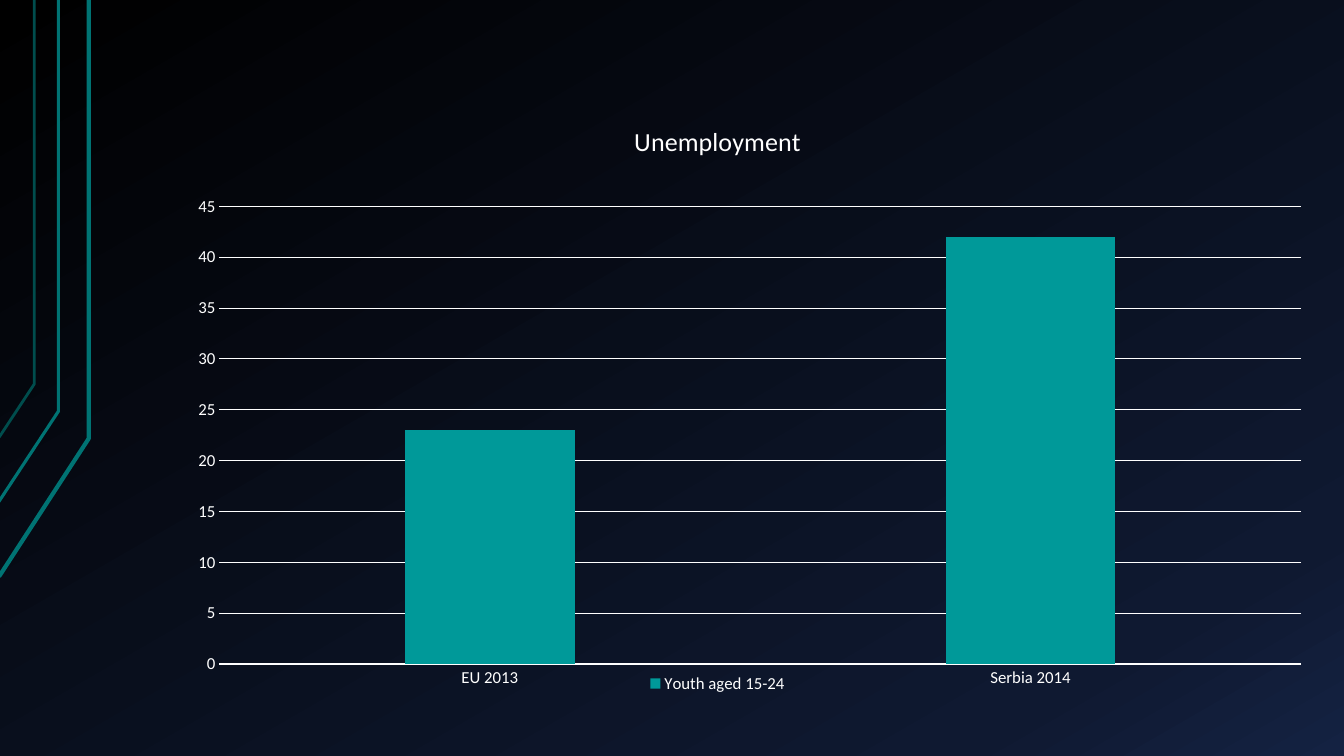
from copy import deepcopy

from lxml import etree
from pptx import Presentation
from pptx import util as u
from pptx.chart import data
from pptx.dml.color import RGBColor
from pptx.enum import chart as ch
from pptx.oxml import ns

WIDTH, HEIGHT = 13.33, 7.5
FONT = "Calibri"
COLOURS = {
    "night": "000000",
    "navy": "0F1931",
    "dusk": "142242",
    "trace": "007373",
    "faint_trace": "004D4D",
    "bar": "009999",
    "text": "FFFFFF",
}
BACKDROP_STOPS = [(0, "night"), (85, "navy"), (100, "dusk")]
BACKDROP_ANGLE = 60

# Each trace: start x, start y, bend x, bend y (hundredths of an inch),
# width (pt), colour
TRACES = [
    (-1, 572, 88, 435, 3, "trace"),
    (-2, 499, 58, 408, 2.25, "trace"),
    (-1, 434, 34, 381, 2, "faint_trace"),
]


def rgb(name):
    return RGBColor.from_string(COLOURS[name])


def style_font(font, size):
    font.name, font.size, font.bold = FONT, u.Pt(size), False
    font.color.rgb = rgb("text")


def style_line(line, colour, width):
    line.color.rgb = rgb(colour)
    line.width = u.Pt(width)


def paint_backdrop(slide):
    fill = slide.background.fill
    fill.gradient()
    gradient = slide.background._cSld.find(".//" + ns.qn("a:gradFill"))
    stops = gradient.find(ns.qn("a:gsLst"))
    stops.append(deepcopy(stops[-1]))
    for stop, (position, colour) in zip(fill.gradient_stops, BACKDROP_STOPS):
        stop.color.rgb = rgb(colour)
        stop.position = position / 100
    # Clockwise angle, in 60000ths of a degree
    direction = gradient.find(ns.qn("a:lin"))
    direction.set("ang", str(BACKDROP_ANGLE * 60000))
    direction.set("scaled", "0")


def add_trace(slide, x, y, bend_x, bend_y, width, colour):
    builder = slide.shapes.build_freeform(x, y, scale=u.Inches(0.01))
    builder.add_line_segments([(bend_x, bend_y), (bend_x, 0)], close=False)
    trace = builder.convert_to_shape()
    trace.shadow.inherit = False
    trace.fill.background()
    style_line(trace.line, colour, width)


def place_plot(chart, **shares):
    """Fix the inner plot area, in shares of the chart's size."""
    plot_area = chart._chartSpace.find(".//" + ns.qn("c:plotArea"))
    for old in plot_area.findall(ns.qn("c:layout")):
        plot_area.remove(old)
    layout = etree.Element(ns.qn("c:layout"))
    manual = etree.SubElement(layout, ns.qn("c:manualLayout"))
    settings = {"layoutTarget": "inner", "xMode": "edge", "yMode": "edge"}
    for tag, value in {**settings, **shares}.items():
        etree.SubElement(manual, ns.qn("c:" + tag)).set("val", str(value))
    plot_area.insert(0, layout)


def style_axis(axis):
    axis.major_tick_mark = axis.minor_tick_mark = ch.XL_TICK_MARK.NONE
    style_font(axis.tick_labels.font, 12)


def add_unemployment_chart(slide):
    rates = data.CategoryChartData()
    rates.categories = ["EU 2013", "Serbia 2014"]
    rates.add_series("Youth aged 15-24", [23, 42])
    chart = slide.shapes.add_chart(
        ch.XL_CHART_TYPE.COLUMN_CLUSTERED,
        u.Inches(1.33), u.Inches(1), u.Inches(11.58), u.Inches(5.92), rates,
    ).chart
    style_font(chart.font, 10)

    # Title
    heading = chart.chart_title.text_frame
    heading.text = "Unemployment"
    style_font(heading.paragraphs[0].font, 18.6)
    chart.chart_title.include_in_layout = False

    # Columns
    columns = chart.plots[0]
    columns.vary_by_categories = False
    columns.gap_width, columns.overlap = 219, -27
    columns.series[0].format.fill.solid()
    columns.series[0].format.fill.fore_color.rgb = rgb("bar")
    place_plot(chart, x=0.073, y=0.177, w=0.927, h=0.767)

    # Axes
    style_axis(chart.category_axis)
    style_line(chart.category_axis.format.line, "text", 0.75)
    rate_axis = chart.value_axis
    style_axis(rate_axis)
    rate_axis.minimum_scale, rate_axis.maximum_scale = 0, 45
    rate_axis.major_unit = 5
    rate_axis.format.line.fill.background()
    style_line(rate_axis.major_gridlines.format.line, "text", 0.75)

    # Legend
    chart.has_legend = True
    chart.legend.position = ch.XL_LEGEND_POSITION.BOTTOM
    chart.legend.include_in_layout = False
    style_font(chart.legend.font, 12)


def main():
    deck = Presentation()
    deck.slide_width, deck.slide_height = u.Inches(WIDTH), u.Inches(HEIGHT)
    slide = deck.slides.add_slide(deck.slide_layouts[6])
    paint_backdrop(slide)
    for trace in TRACES:
        add_trace(slide, *trace)
    add_unemployment_chart(slide)
    deck.save("out.pptx")


if __name__ == "__main__":
    main()
